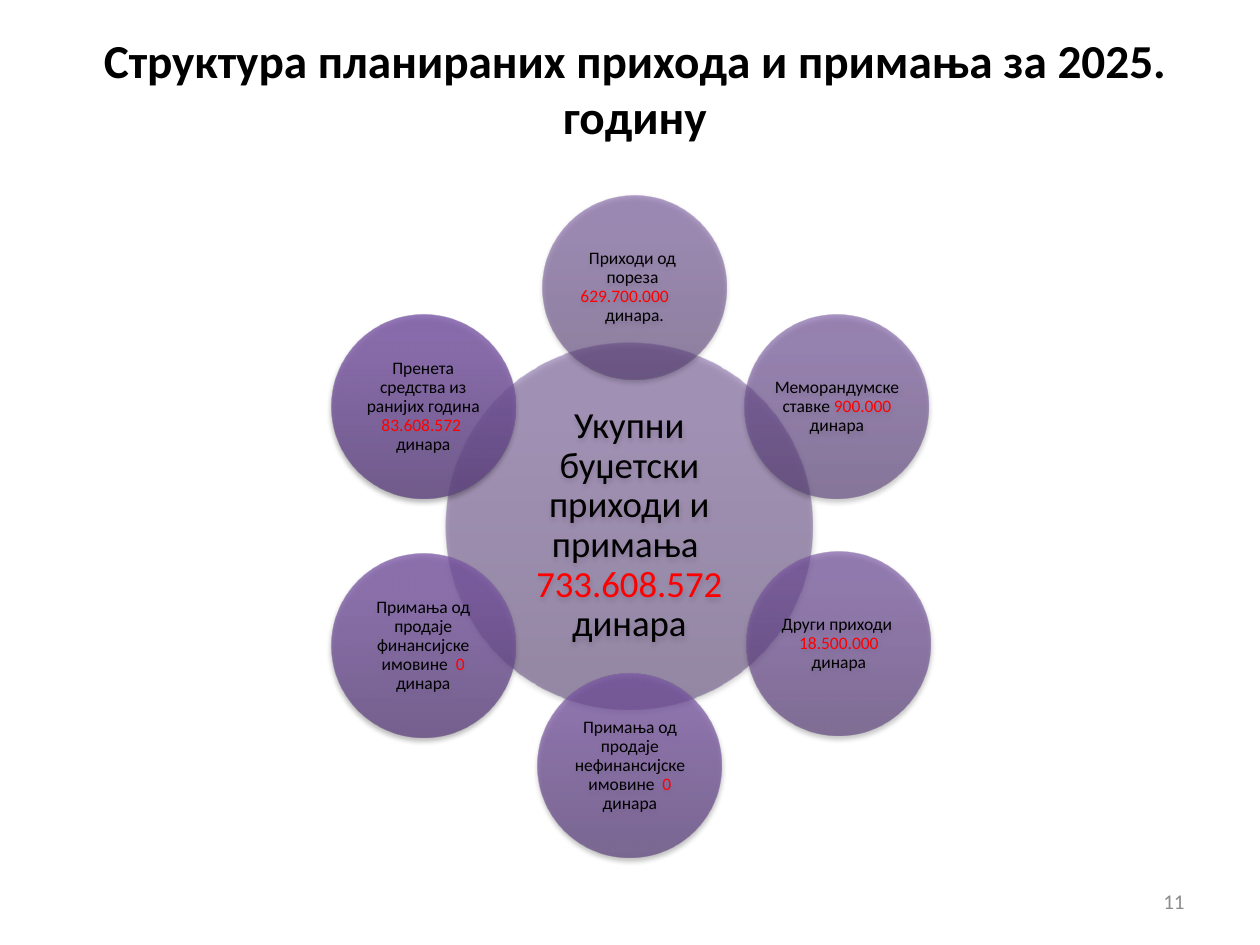
from dataclasses import dataclass

from pptx import Presentation
from pptx.dml.color import RGBColor
from pptx.enum.shapes import MSO_SHAPE
from pptx.enum.text import MSO_ANCHOR, PP_ALIGN
from pptx.oxml import parse_xml
from pptx.oxml.ns import nsdecls, qn
from pptx.util import Pt

OVAL = MSO_SHAPE.OVAL
MIDDLE = MSO_ANCHOR.MIDDLE
CENTER, RIGHT = PP_ALIGN.CENTER, PP_ALIGN.RIGHT


@dataclass(frozen=True)
class Theme:
    font: str = "Calibri"
    text: str = "000000"
    amount: str = "FF0000"
    number: str = "8C8C8C"
    shadow: str = "000000"
    title_size: float = 27
    total_size: float = 21
    source_size: float = 10
    number_size: float = 12
    total_fill: tuple = ("563D74", "705097", "704F99")
    source_fills: tuple = (
        ("583E76", "72519A", "72509C"),
        ("593F79", "74529D", "74519F"),
        ("5B407B", "7653A0", "7652A2"),
        ("5C417D", "7854A3", "7853A5"),
        ("5E437F", "7A57A4", "7A56A7"),
        ("5F4580", "7C59A6", "7C58A8"),
    )


THEME = Theme()
STOPS = (0, 80, 100)
TOTAL_DIAMETER = 209.5
SOURCE_DIAMETER = 105.1

TOTAL = (254.9, 195.7, "Укупни буџетски приходи и примања  ", "733.608.572 ", "динара")
SOURCES = [
    (310, 111.6, "Приходи од  пореза  ", "629.700.000   ", "   динара."),
    (425.7, 179.8, "Меморандумске ставке ", "900.000 ", "динара"),
    (426.8, 315.4, "Други приходи  ", "18.500.000 ", "динара"),
    (307.4, 385.1, "Примања од продаје нефинансијске имовине  ", "0", " динара"),
    (189.3, 316.6, "Примања од продаје финансијске имовине  ", "0 ", "динара"),
    (189.3, 179.8, "Пренета средства из ранијих година ", "83.608.572  ", "динара"),
]


def write(tf, runs, size, align=CENTER, bold=False, inset=None, spacing=None):
    frame_format = {"word_wrap": True, "vertical_anchor": MIDDLE}
    if inset is not None:
        for side in ("left", "top", "right", "bottom"):
            frame_format[f"margin_{side}"] = Pt(inset)
    for name, value in frame_format.items():
        setattr(tf, name, value)
    p = tf.paragraphs[0]
    for name, value in {"alignment": align, "line_spacing": spacing}.items():
        setattr(p, name, value)
    for text, color in runs:
        r = p.add_run()
        r.text = text
        font_format = {"name": THEME.font, "size": Pt(size), "bold": bold}
        for name, value in font_format.items():
            setattr(r.font, name, value)
        r.font.color.rgb = RGBColor.from_string(color)


def add_text(slide, box, text, size, color, **text_format):
    sp = slide.shapes.add_textbox(*map(Pt, box))
    write(sp.text_frame, [(text, color)], size, **text_format)


def shade(sp, colors, opacity):
    stops = "".join(
        f'<a:gs pos="{pos * 1000}"><a:srgbClr val="{color}">'
        f'<a:alpha val="{opacity * 1000}"/></a:srgbClr></a:gs>'
        for pos, color in zip(STOPS, colors)
    )
    gradient = parse_xml(
        f'<a:gradFill {nsdecls("a")} rotWithShape="1"><a:gsLst>{stops}</a:gsLst>'
        '<a:lin ang="16200000" scaled="0"/></a:gradFill>'
    )
    shadow = parse_xml(
        f'<a:outerShdw {nsdecls("a")} blurRad="{Pt(3.1)}" dist="{Pt(1.8)}" '
        f'dir="5400000" rotWithShape="0"><a:srgbClr val="{THEME.shadow}">'
        '<a:alpha val="35000"/></a:srgbClr></a:outerShdw>'
    )
    sp.line.fill.background()
    sp.shadow.inherit = False
    properties = sp._element.spPr
    properties.find(qn("a:prstGeom")).addnext(gradient)
    properties.find(qn("a:effectLst")).append(shadow)


def add_circle(slide, item, diameter, colors, opacity, size, inset):
    left, top, label, amount, unit = item
    sp = slide.shapes.add_shape(OVAL, *map(Pt, (left, top, diameter, diameter)))
    shade(sp, colors, opacity)
    runs = [(label, THEME.text), (amount, THEME.amount), (unit, THEME.text)]
    write(sp.text_frame, runs, size, inset=inset, spacing=0.9)


def main():
    prs = Presentation()
    prs.slide_width, prs.slide_height = Pt(720), Pt(540)
    slide = prs.slides.add_slide(prs.slide_layouts[6])
    add_text(slide, (38.9, 19.4, 648, 61.2),
             "Структура планираних прихода и примања за 2025. годину",
             THEME.title_size, THEME.text, bold=True)
    add_text(slide, (516, 500.5, 168, 28.8), "11",
             THEME.number_size, THEME.number, align=RIGHT)
    add_circle(slide, TOTAL, TOTAL_DIAMETER, THEME.total_fill, 50,
               THEME.total_size, 2)
    for i, (item, colors) in enumerate(zip(SOURCES, THEME.source_fills)):
        add_circle(slide, item, SOURCE_DIAMETER, colors, 55 + 5 * i,
                   THEME.source_size, 1)
    prs.save("out.pptx")


if __name__ == "__main__":
    main()
